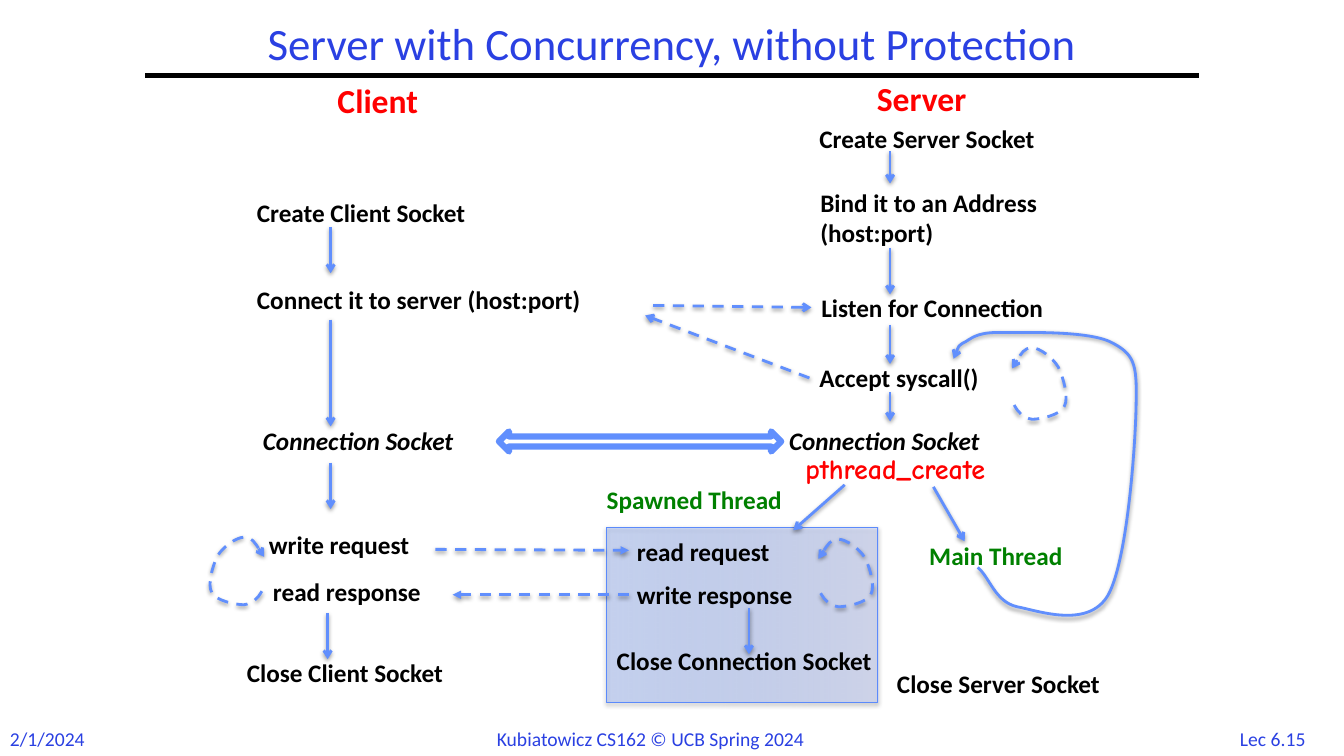
from lxml.etree import SubElement
from pptx import Presentation
from pptx.dml.color import RGBColor
from pptx.enum.dml import MSO_LINE_DASH_STYLE as DASH
from pptx.enum.shapes import MSO_CONNECTOR as CONN, MSO_SHAPE as SHAPE
from pptx.enum.text import MSO_ANCHOR as ANCHOR, PP_ALIGN as ALIGN
from pptx.oxml.ns import qn
from pptx.util import Emu, Inches, Pt

COLS, ROWS = 133.33, 75
CELL = Inches(0.1)
BLUE, TITLE_BLUE, RED, GREEN = "618FFD", "2A40E2", "FF0000", "008000"
LOOP = [(0.04, 0.8), (0.11, 0.9), (0.2, 0.98), (0.37, 1), (0.52, 1),
        (0.89, 0.94), (0.96, 0.82), (1.05, 0.7), (0.94, 0.41), (0.85, 0.27),
        (0.74, 0.13), (0.5, 0), (0.37, 0), (0.22, 0), (0.11, 0.15), (0, 0.29)]


def cells(*values):
    return [Emu(round(v * CELL)) for v in values]


def color(value):
    return RGBColor.from_string(value)


def label(slide, text, x, y, w, h=4, size=18, fill="000000", bold=True,
          italic=False, font="Calibri", align=ALIGN.LEFT, wrap=False):
    tf = slide.shapes.add_textbox(*cells(x, y, w, h)).text_frame
    tf.text = text
    tf.word_wrap = wrap
    for p in tf.paragraphs:
        p.alignment = align
        for r in p.runs:
            r.font.name, r.font.size = font, Pt(size)
            r.font.bold, r.font.italic = bold, italic
            r.font.color.rgb = color(fill)
    return tf


def add_shadow(sp, alpha, distance):
    spPr = sp.element.spPr
    effects = spPr.find(qn("a:effectLst"))
    if effects is None:
        effects = SubElement(spPr, qn("a:effectLst"))
    shadow = SubElement(effects, qn("a:outerShdw"), blurRad=str(Pt(3.1)),
                        dist=str(Pt(distance)), dir="5400000", rotWithShape="0")
    rgb = SubElement(shadow, qn("a:srgbClr"), val="000000")
    SubElement(rgb, qn("a:alpha"), val=str(alpha * 1000))


def style_arrow(sp, dashed, tip):
    sp.line.color.rgb = color(BLUE)
    sp.line.width = Pt(2)
    if dashed:
        sp.line.dash_style = DASH.DASH
    SubElement(sp.element.spPr.find(qn("a:ln")), qn("a:tailEnd"), type=tip)
    add_shadow(sp, 38, 1.6)


def arrow(slide, x1, y1, x2, y2, dashed=False, tip="arrow"):
    sp = slide.shapes.add_connector(CONN.STRAIGHT, *cells(x1, y1, x2, y2))
    style_arrow(sp, dashed, tip)


def curve(slide, points, dashed=False):
    start, *rest = [cells(*point) for point in points]
    builder = slide.shapes.build_freeform(*start)
    builder.add_line_segments(rest, close=False)
    sp = builder.convert_to_shape()
    outline = sp.element.spPr.find(".//" + qn("a:path"))
    steps = outline.findall(qn("a:lnTo"))
    for i in range(0, len(steps), 3):
        bezier = SubElement(outline, qn("a:cubicBezTo"))
        for step in steps[i:i + 3]:
            bezier.append(step[0])
            outline.remove(step)
    sp.fill.background()
    sp.shadow.inherit = False
    style_arrow(sp, dashed, "arrow")


def loop(slide, x, y, w, h, mirrored=False):
    curve(slide, [(x + w * (1 - u if mirrored else u), y + h * v)
                  for u, v in LOOP], dashed=True)


def frame(slide, w, h):
    margin = 14.4
    title = label(slide, "Server with Concurrency, without Protection", margin, 1.7,
                  w - 2 * margin, 5.8, 32, TITLE_BLUE, False,
                  align=ALIGN.CENTER, wrap=True)
    title.vertical_anchor = ANCHOR.MIDDLE
    title.paragraphs[0].line_spacing = 0.9
    rule = slide.shapes.add_connector(CONN.STRAIGHT,
                                      *cells(margin, 7.5, w - margin, 7.5))
    rule.line.color.rgb = color("000000")
    rule.line.width = Pt(3)
    SubElement(rule.element.spPr, qn("a:effectLst"))
    for text, x, width in [("2/1/2024", 0, 9.6),
                           ("Kubiatowicz CS162 © UCB Spring 2024", 48.3, 36.8),
                           ("Lec 6.15", w - 11.3, 9.7)]:
        label(slide, text, x, h - 3.4, width, 3.4, 14, TITLE_BLUE, False)


def client(slide, x, y):
    label(slide, "Client", x + 9, y, 11.4, 5, 24, RED)
    for text, dx, dy, w in [("Create Client Socket", 1, 11.7, 26.6),
                            ("Connect it to server (host:port)", 1, 20.3, 39.2),
                            ("write request", 2.2, 44.6, 17.7),
                            ("read response", 2.6, 49.3, 19.1),
                            ("Close Client Socket", 0, 57.3, 25.7)]:
        label(slide, text, x + dx, y + dy, w)
    label(slide, "Connection Socket", x + 1.6, y + 34.3, 24.9, italic=True)
    for dx, top, bottom in [(9.3, 15.1, 19.7), (9.3, 24.3, 34.9),
                            (9.3, 38.5, 43.1), (9, 53.4, 58)]:
        arrow(slide, x + dx, y + top, x + dx, y + bottom)
    loop(slide, x - 2.7, y + 45.9, 5.4, 6.7, mirrored=True)


def server(slide, x, y):
    label(slide, "Server", x + 5.7, y, 13, 5, 24, RED)
    for text, dx, dy, w, h in [("Create Server Socket", 0, 4.5, 27.4, 4),
                               ("Bind it to an Address\n(host:port)", 0.1, 10.9, 28, 7.1),
                               ("Listen for Connection", 0.2, 21.3, 28, 4),
                               ("Accept syscall()", 0, 28.3, 21.3, 4),
                               ("Close Server Socket", 7.7, 58.6, 27, 4)]:
        label(slide, text, x + dx, y + dy, w, h)
    label(slide, "Connection Socket", x - 3, y + 34.5, 24.9, italic=True)
    label(slide, "pthread_create", x - 1.4, y + 37.1, 24.1, 4.4, 20, RED,
          font="Comic Neue", wrap=True)
    for top, bottom in [(7.8, 11), (17.4, 22), (25, 28.9), (31.7, 34.6)]:
        arrow(slide, x + 8, y + top, x + 8, y + bottom)
    loop(slide, x + 20.1, y + 27.3, 5.4, 7.1)


def spawned_thread(slide, x, y, w, h):
    sp = slide.shapes.add_shape(SHAPE.RECTANGLE, *cells(x, y, w, h))
    sp.shadow.inherit = False
    sp.fill.gradient()
    sp.fill.gradient_angle = 0
    stops = [(0, "5F8EFF"), (1, "C4D0FF")]
    for stop, (position, value) in zip(sp.fill.gradient_stops, stops):
        stop.position = position
        stop.color.rgb = color(value)
    for rgb, alpha in zip(sp.element.spPr.iter(qn("a:srgbClr")), (26, 46)):
        SubElement(rgb, qn("a:alpha"), val=str(alpha * 1000))
    sp.line.color.rgb = color("5B8AFB")
    sp.line.width = Pt(0.75)
    add_shadow(sp, 35, 1.8)
    label(slide, "Spawned Thread", x - 1, y - 4.7, 22.2, fill=GREEN)
    label(slide, "read request", x + 2, y + 0.4, 17.7)
    label(slide, "write response", x + 2, y + 4.7, 19.9)
    label(slide, "Close Connection Socket", x, y + 11.2, 29.4, 7.1, wrap=True)
    arrow(slide, x + 14.1, y + 8, x + 14.1, y + 12.6)
    arrow(slide, x + 23.6, y - 4.2, x + 18.5, y + 0.3)
    loop(slide, x + 21, y + 1.2, 5.4, 6.7)


def main_thread(slide, x, y):
    label(slide, "Main Thread", x, y, 16.9, fill=GREEN)
    arrow(slide, x + 1.4, y - 4.8, x + 4.5, y + 0.6)
    path_back = [(5.8, 3.2), (7, 4.2), (7.5, 6.6), (9.7, 7.1), (11.8, 7.5),
                 (16.7, 9.3), (18.7, 6), (20.6, 2.7), (21.4, -8.4), (21.5, -12.5),
                 (21.6, -16.7), (21.5, -17.8), (19.3, -19), (17.2, -20.3),
                 (10.9, -20.1), (8.5, -20.1), (6, -20.2), (5.4, -19.7),
                 (4.6, -19.2), (3.8, -18.8), (3.6, -18.1), (3.4, -17.5)]
    curve(slide, [(x + dx, y + dy) for dx, dy in path_back])


def messages(slide, x, y):
    for x1, y1, x2, y2, tip in [(21.6, 0, 37.3, 0.2, "arrow"),
                                (37.1, 7.2, 20.8, 1, "arrow"),
                                (0, 24.2, 19.2, 24.3, "triangle"),
                                (19.2, 28.7, 1.7, 28.7, "triangle")]:
        arrow(slide, x + x1, y + y1, x + x2, y + y2, True, tip)
    channel = slide.shapes.add_shape(SHAPE.LEFT_RIGHT_ARROW,
                                     *cells(x + 6.3, y + 12.5, 28, 2))
    channel.shadow.inherit = False
    channel.fill.solid()
    channel.fill.fore_color.rgb = color("FFFFFF")
    channel.line.color.rgb = color(BLUE)
    channel.line.width = Pt(4.5)


def main():
    prs = Presentation()
    prs.slide_width, prs.slide_height = cells(COLS, ROWS)
    slide = prs.slides.add_slide(prs.slide_layouts[6])
    frame(slide, COLS, ROWS)
    spawned_thread(slide, 60.2, 52.3, 26.9, 17.4)
    client(slide, 23.5, 7.4)
    server(slide, 80.3, 7.2)
    main_thread(slide, 91.2, 53.1)
    messages(slide, 43.2, 30.3)
    prs.save("out.pptx")


if __name__ == "__main__":
    main()
